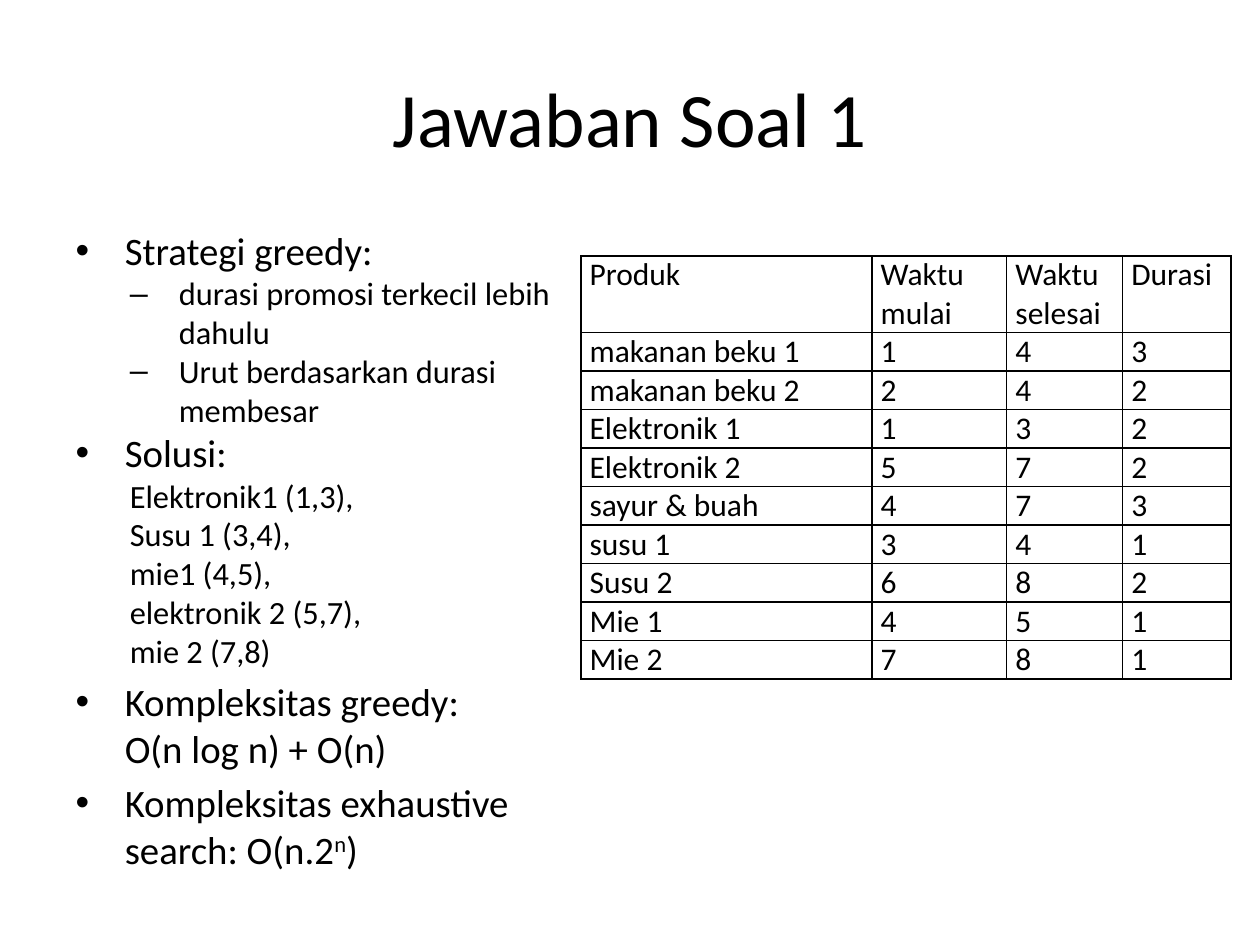
import pptx
import pptx.util
import pptx.dml.color
import pptx.enum.text
import pptx.oxml.ns
import lxml.etree

BLACK = pptx.dml.color.RGBColor(0, 0, 0)
ALIGN = pptx.enum.text.PP_ALIGN
inch = pptx.util.Inches
qn = pptx.oxml.ns.qn


def write(para, text, size=18, align=None, above=0, raised=False):
    """Add text to a paragraph; a vertical tab marks a line break."""
    if align is not None:
        para.alignment = align
    para.space_before = pptx.util.Pt(above)
    for i, part in enumerate(text.split("\v")):
        if i:
            para.add_line_break()
            gap = para._p.findall(qn("a:br"))[-1]
            lxml.etree.SubElement(gap, qn("a:rPr"), sz=str(round(size * 100)))
        run = para.add_run()
        run.text = part
        run.font.name = "Calibri"
        run.font.size = pptx.util.Pt(size)
        run.font.color.rgb = BLACK
        if raised:
            run._r.get_or_add_rPr().set("baseline", "30000")


deck = pptx.Presentation()
deck.slide_width, deck.slide_height = inch(10), inch(7.5)
slide = deck.slides.add_slide(deck.slide_layouts[1])
title, body = slide.placeholders

# Title
title.left, title.top, title.width, title.height = map(inch, (0.5, 0.3, 9, 1.25))
title.text_frame.vertical_anchor = pptx.enum.text.MSO_ANCHOR.MIDDLE
write(title.text_frame.paragraphs[0], "Jawaban Soal 1", size=44, align=ALIGN.CENTER)

# Answer list: text, level, bullet, space above
body.left, body.top, body.width, body.height = map(inch, (0.5, 1.75, 4.11, 4.95))
frame = body.text_frame
frame.word_wrap = True
frame.auto_size = pptx.enum.text.MSO_AUTO_SIZE.NONE
SIZES = (22.2, 18.5)
LEFTS = (0.39, 0.82)
items = [
    ("Strategi greedy:", 0, "•", 0),
    ("durasi promosi terkecil lebih dahulu", 1, "–", 0),
    ("Urut berdasarkan durasi membesar", 1, "–", 0),
    ("Solusi:", 0, "•", 0),
    ("Elektronik1 (1,3),", 1, None, 0),
    ("Susu 1 (3,4),", 1, None, 0),
    ("mie1 (4,5),", 1, None, 0),
    ("elektronik 2 (5,7),", 1, None, 0),
    ("mie 2 (7,8)", 1, None, 0),
    ("Kompleksitas greedy: \vO(n log n) + O(n)", 0, "•", 4.44),
    ("Kompleksitas exhaustive search: O(n.2", 0, "•", 4.44),
]
for i, (text, level, mark, above) in enumerate(items):
    para = frame.add_paragraph() if i else frame.paragraphs[0]
    para.level = level
    props = para._p.get_or_add_pPr()
    props.set("marL", str(inch(LEFTS[level])))
    props.set("indent", str(inch(-0.39)))
    if mark:
        lxml.etree.SubElement(props, qn("a:buFont"), typeface="Arial")
        lxml.etree.SubElement(props, qn("a:buChar"), char=mark)
    else:
        lxml.etree.SubElement(props, qn("a:buNone"))
    write(para, text, size=SIZES[level], above=above)

# Exponent that ends the list
write(para, "n", size=SIZES[0], above=above, raised=True)
write(para, ")", size=SIZES[0], above=above)

# Product table
rows = [
    ("Produk", "Waktu mulai", "Waktu selesai", "Durasi"),
    ("makanan beku 1", 1, 4, 3),
    ("makanan beku 2", 2, 4, 2),
    ("Elektronik 1", 1, 3, 2),
    ("Elektronik 2", 5, 7, 2),
    ("sayur & buah", 4, 7, 3),
    ("susu 1", 3, 4, 1),
    ("Susu 2", 6, 8, 2),
    ("Mie 1", 4, 5, 1),
    ("Mie 2", 7, 8, 1),
]
widths = (2.31, 1.07, 0.92, 0.86)
line = 0.3
grid = slide.shapes.add_table(
    len(rows), len(widths), inch(4.61), inch(2.03),
    inch(sum(widths)), inch(line * (len(rows) + 1))).table
grid.first_row = grid.horz_banding = False
for col, width in zip(grid.columns, widths):
    col.width = inch(width)
for r, row in enumerate(rows):
    grid.rows[r].height = inch(line if r else 2 * line)
    for c, value in enumerate(row):
        cell = grid.cell(r, c)
        cell.margin_left = cell.margin_right = inch(0.07)
        cell.margin_top = cell.margin_bottom = 0
        write(cell.text_frame.paragraphs[0], str(value), align=ALIGN.JUSTIFY)
        # Thin black borders, then no fill
        props = cell._tc.get_or_add_tcPr()
        for side in ("lnL", "lnR", "lnT", "lnB"):
            edge = lxml.etree.SubElement(props, qn("a:" + side), w=str(pptx.util.Pt(1)))
            ink = lxml.etree.SubElement(edge, qn("a:solidFill"))
            lxml.etree.SubElement(ink, qn("a:srgbClr"), val=str(BLACK))
        cell.fill.background()

deck.save("out.pptx")
